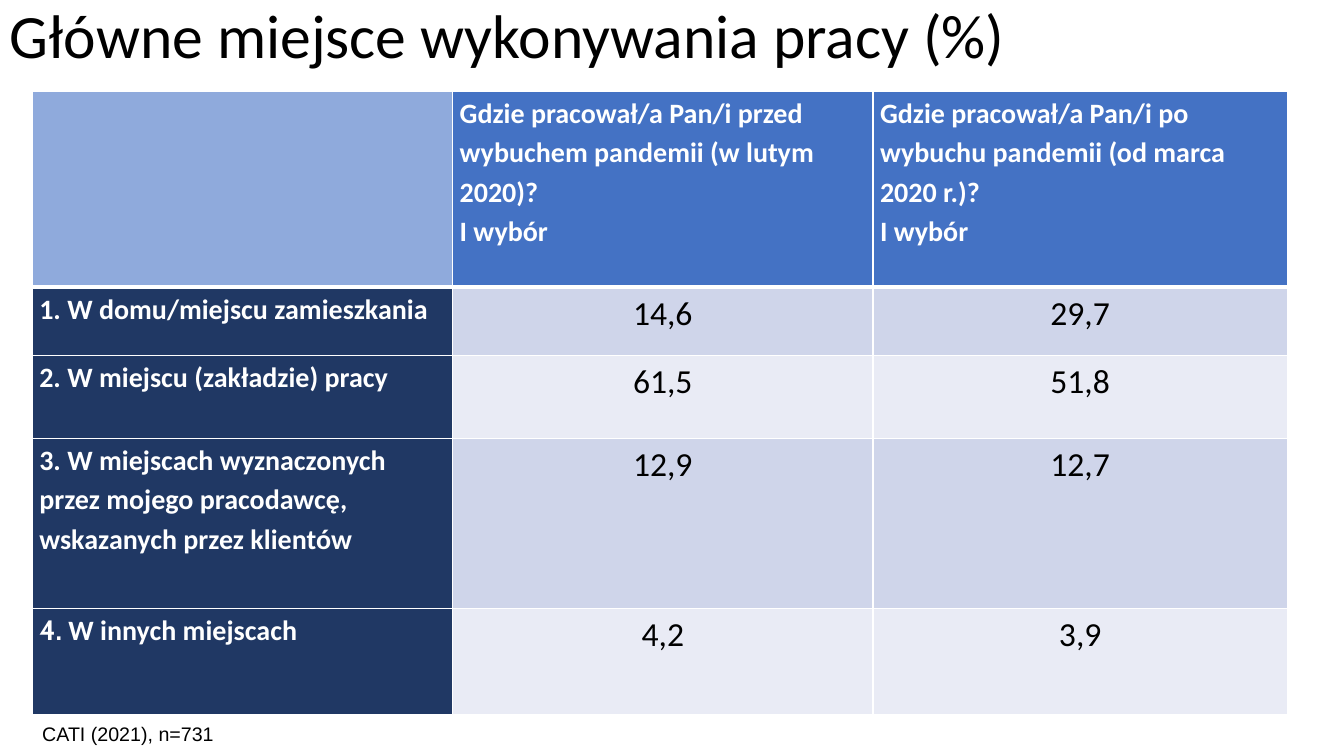
"""Build a one-slide table of main workplaces before and after the pandemic."""
from dataclasses import dataclass

from lxml import etree
from pptx import Presentation
from pptx.dml.color import RGBColor
from pptx.enum.text import MSO_ANCHOR, PP_ALIGN
from pptx.oxml.ns import qn
from pptx.util import Inches, Pt

LEFT, CENTER = PP_ALIGN.LEFT, PP_ALIGN.CENTER
MIDDLE, TOP = MSO_ANCHOR.MIDDLE, MSO_ANCHOR.TOP


@dataclass(frozen=True)
class Theme:
    black: str = "000000"
    white: str = "FFFFFF"
    corner: str = "8FAADC"
    header: str = "4472C4"
    label: str = "203864"
    bands: tuple = ("CFD5EA", "E9EBF5")
    font: str = "Calibri"
    number_font: str = "Cabin"
    note_font: str = "Arial"
    title_size: int = 44
    value_size: int = 24
    label_size: int = 20
    note_size: int = 14
    thin: int = 1
    thick: int = 3


HEADERS = [
    "",
    "Gdzie pracował/a Pan/i przed wybuchem pandemii (w lutym 2020)?\nI wybór",
    "Gdzie pracował/a Pan/i po wybuchu pandemii (od marca 2020 r.)?\nI wybór",
]
WORKPLACES = [
    ("1. W domu/miejscu zamieszkania", "14,6", "29,7"),
    ("2. W miejscu (zakładzie) pracy", "61,5", "51,8"),
    ("3. W miejscach wyznaczonych przez mojego pracodawcę, wskazanych przez klientów",
     "12,9", "12,7"),
    ("4. W innych miejscach", "4,2", "3,9"),
]
COLUMN_SHARES = [31.28, 31.28, 30.83]
ROW_SHARES = [25.87, 9.07, 10.93, 22.53, 14]


def write_text(frame, text, *, size, font, color, bold=False, align=LEFT,
               spacing=1.0, lead="", lead_font=None):
    """Fill a text frame, one paragraph per line, with an optional lead in its own font."""
    for index, line in enumerate(text.split("\n")):
        para = frame.paragraphs[0] if index == 0 else frame.add_paragraph()
        para.alignment = align
        para.line_spacing = spacing
        for part, face in ((lead, lead_font), (line, font)):
            if part:
                span = para.add_run()
                span.text = part
                span.font.name = face
                span.font.size = Pt(size)
                span.font.bold = bold
                span.font.color.rgb = RGBColor.from_string(color)


class Page:
    """Hold the theme and current slide; places are percentages of its size."""

    def __init__(self, deck, theme):
        self.deck = deck
        self.theme = theme
        self.slide = deck.slides.add_slide(deck.slide_layouts[6])

    def across(self, share):
        return int(self.deck.slide_width * share / 100)

    def down(self, share):
        return int(self.deck.slide_height * share / 100)

    def text(self, text, left, top, width, height, **style):
        box = self.slide.shapes.add_textbox(
            self.across(left), self.down(top), self.across(width), self.down(height))
        frame = box.text_frame
        frame.word_wrap = True
        frame.vertical_anchor = MIDDLE
        write_text(frame, text, color=self.theme.black, **style)

    def table(self, left, top, widths, heights):
        frame = self.slide.shapes.add_table(
            len(heights), len(widths), self.across(left), self.down(top),
            self.across(sum(widths)), self.down(sum(heights)))
        table = frame.table
        for column, share in zip(table.columns, widths):
            column.width = self.across(share)
        for row, share in zip(table.rows, heights):
            row.height = self.down(share)
        return table

    def cell(self, cell, text, fill, *, top_line, bottom_line, **style):
        cell.margin_left = cell.margin_right = Inches(0.07)
        cell.margin_top = cell.margin_bottom = 0
        cell.vertical_anchor = TOP
        thin = self.theme.thin
        properties = cell._tc.get_or_add_tcPr()
        for side, width in zip("LRTB", (thin, thin, top_line, bottom_line)):
            line = etree.SubElement(properties, qn(f"a:ln{side}"), w=str(Pt(width)))
            paint = etree.SubElement(line, qn("a:solidFill"))
            etree.SubElement(paint, qn("a:srgbClr"), val=self.theme.white)
        cell.fill.solid()
        cell.fill.fore_color.rgb = RGBColor.from_string(fill)
        write_text(cell.text_frame, text, font=self.theme.font, spacing=1.15, **style)


def main():
    theme = Theme()
    deck = Presentation()
    deck.slide_width, deck.slide_height = Inches(13.33), Inches(7.5)
    page = Page(deck, theme)
    page.text("Główne miejsce wykonywania pracy (%)", 0, -4.53, 86.27, 19.33,
              size=theme.title_size, font=theme.font, spacing=0.9)

    table = page.table(2.4, 12.13, COLUMN_SHARES, ROW_SHARES)
    bold_white = {"size": theme.label_size, "color": theme.white, "bold": True}
    for column, text in enumerate(HEADERS):
        page.cell(table.cell(0, column), text, theme.header if text else theme.corner,
                  top_line=theme.thin, bottom_line=theme.thick, **bold_white)
    for row, (label, *values) in enumerate(WORKPLACES, start=1):
        lines = {"top_line": theme.thick if row == 1 else theme.thin,
                 "bottom_line": theme.thin}
        lead = label[:3]
        lead_font = theme.number_font if row == len(WORKPLACES) else theme.font
        page.cell(table.cell(row, 0), label[3:], theme.label, lead=lead,
                  lead_font=lead_font, **lines, **bold_white)
        for column, value in enumerate(values, start=1):
            page.cell(table.cell(row, column), value, theme.bands[(row - 1) % 2],
                      size=theme.value_size, color=theme.black, align=CENTER, **lines)

    page.text("CATI (2021), n=731", 2.4, 94.13, 37.5, 5.87,
              size=theme.note_size, font=theme.note_font)
    deck.save("out.pptx")


if __name__ == "__main__":
    main()
